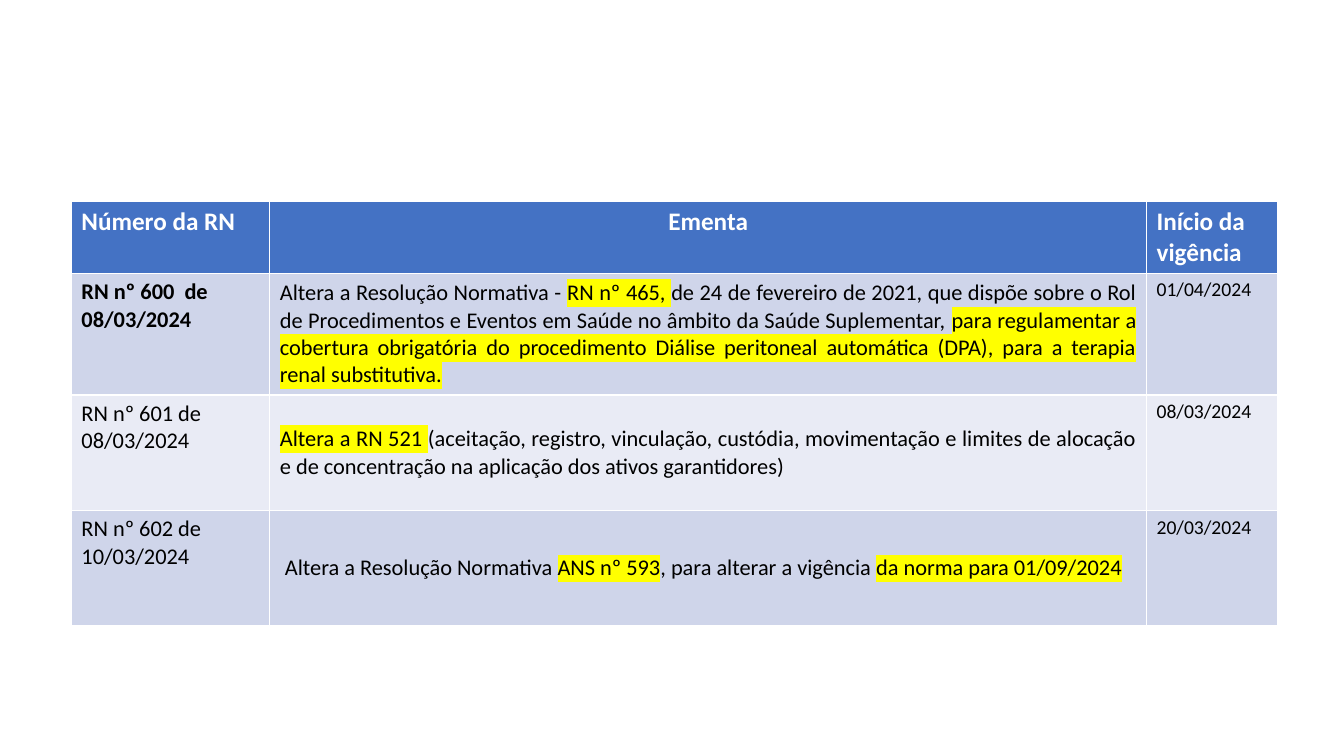
import dataclasses

import lxml.etree
import pptx
import pptx.dml.color
import pptx.enum.text
import pptx.oxml.ns
import pptx.table
import pptx.text.text
import pptx.util

RGB = pptx.dml.color.RGBColor
ALIGN = pptx.enum.text.PP_ALIGN
ANCHOR = pptx.enum.text.MSO_ANCHOR

WHITE = RGB(0xFF, 0xFF, 0xFF)
BLACK = RGB(0x00, 0x00, 0x00)
BLUE = RGB(0x44, 0x72, 0xC4)
DARK = RGB(0xCF, 0xD5, 0xEA)
LIGHT = RGB(0xE9, 0xEB, 0xF5)
YELLOW = RGB(0xFF, 0xFF, 0x00)

FONT = "Calibri"
COLS = (189, 835, 125)
ROWS = (62, 116, 110, 110)


def px(count: int) -> int:
    return pptx.util.Emu(count * 9525)


@dataclasses.dataclass
class Piece:
    text: str
    mark: bool = False


@dataclasses.dataclass
class Style:
    size: int
    color: RGB = BLACK
    bold: bool = False
    align: ALIGN = ALIGN.LEFT
    anchor: ANCHOR = ANCHOR.TOP


@dataclasses.dataclass
class Rule:
    number: str
    summary: list[Piece]
    start: str
    bold: bool = False


HEADS = (
    ("Número da RN", ALIGN.LEFT),
    ("Ementa", ALIGN.CENTER),
    ("Início da vigência", ALIGN.LEFT),
)
RULES = (
    Rule("RN nº 600  de 08/03/2024", [
        Piece("Altera a Resolução Normativa - "),
        Piece("RN nº 465, ", True),
        Piece("de 24 de fevereiro de 2021, que dispõe sobre o Rol de Procedimentos e "
              "Eventos em Saúde no âmbito da Saúde Suplementar, "),
        Piece("para regulamentar a cobertura obrigatória do procedimento Diálise "
              "peritoneal automática (DPA), para a terapia renal substitutiva.", True),
    ], "01/04/2024", bold=True),
    Rule("RN nº 601 de 08/03/2024", [
        Piece("Altera a RN 521 ", True),
        Piece("(aceitação, registro, vinculação, custódia, movimentação e limites de "
              "alocação e de concentração na aplicação dos ativos garantidores) "),
    ], "08/03/2024"),
    Rule("RN nº 602 de 10/03/2024", [
        Piece(" Altera a Resolução Normativa "),
        Piece("ANS nº 593", True),
        Piece(", para alterar a vigência "),
        Piece("da norma para 01/09/2024", True),
    ], "20/03/2024"),
)


def add_mark(run: pptx.text.text._Run) -> None:
    qn = pptx.oxml.ns.qn
    mark = lxml.etree.SubElement(run._r.get_or_add_rPr(), qn("a:highlight"))
    lxml.etree.SubElement(mark, qn("a:srgbClr"), val=str(YELLOW))


def fill_cell(cell: pptx.table._Cell, pieces: list[Piece], style: Style, back: RGB) -> None:
    cell.fill.solid()
    cell.fill.fore_color.rgb = back
    cell.vertical_anchor = style.anchor
    para = cell.text_frame.paragraphs[0]
    para.alignment = style.align
    para.font.name = FONT
    para.font.size = pptx.util.Pt(style.size)
    para.font.bold = style.bold
    para.font.color.rgb = style.color
    for piece in pieces:
        run = para.add_run()
        run.text = piece.text
        if piece.mark:
            add_mark(run)


def main() -> None:
    deck = pptx.Presentation()
    deck.slide_width, deck.slide_height = px(1280), px(720)
    slide = deck.slides.add_slide(deck.slide_layouts[6])

    # Table grid
    table = slide.shapes.add_table(
        len(ROWS), len(COLS), px(68), px(192), px(sum(COLS)), px(sum(ROWS))
    ).table
    for col, width in zip(table.columns, COLS):
        col.width = px(width)
    for row, height in zip(table.rows, ROWS):
        row.height = px(height)

    # Header row
    for col, (text, align) in enumerate(HEADS):
        style = Style(18, WHITE, True, align)
        fill_cell(table.cell(0, col), [Piece(text)], style, BLUE)

    # One row per rule
    body = Style(16, align=ALIGN.JUSTIFY, anchor=ANCHOR.MIDDLE)
    for row, rule in enumerate(RULES, 1):
        back = DARK if row % 2 else LIGHT
        fill_cell(table.cell(row, 0), [Piece(rule.number)], Style(16, bold=rule.bold), back)
        fill_cell(table.cell(row, 1), rule.summary, body, back)
        fill_cell(table.cell(row, 2), [Piece(rule.start)], Style(14), back)

    deck.save("out.pptx")


if __name__ == "__main__":
    main()
